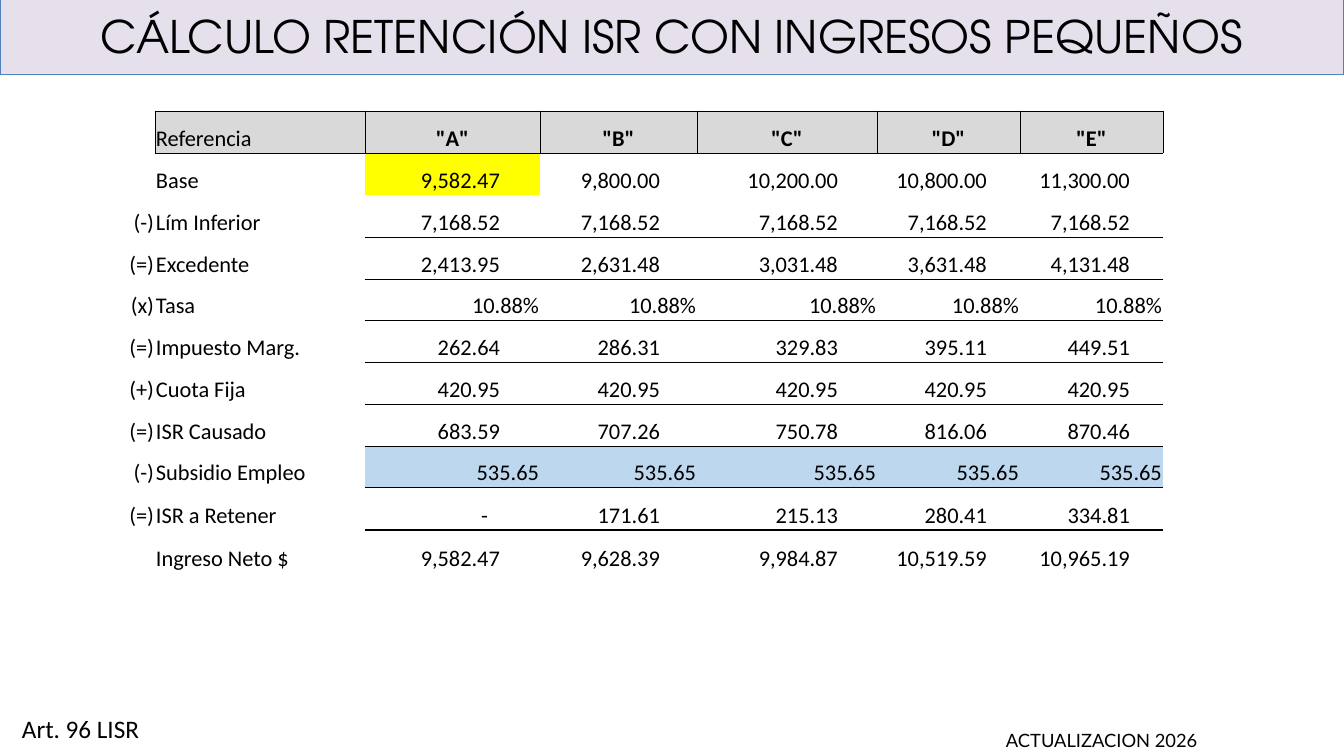
from lxml import etree
from pptx import Presentation
from pptx.dml.color import RGBColor
from pptx.enum.shapes import MSO_SHAPE
from pptx.enum.text import MSO_ANCHOR, PP_ALIGN
from pptx.oxml.ns import qn
from pptx.util import Pt

PX = 914400 / 100.8
RECTANGLE = MSO_SHAPE.RECTANGLE
TOP, MIDDLE, BOTTOM = MSO_ANCHOR.TOP, MSO_ANCHOR.MIDDLE, MSO_ANCHOR.BOTTOM
LEFT, CENTER, RIGHT = PP_ALIGN.LEFT, PP_ALIGN.CENTER, PP_ALIGN.RIGHT
BLACK = RGBColor(0x00, 0x00, 0x00)
LILAC = RGBColor(0xE6, 0xE0, 0xEC)
STEEL = RGBColor(0x4F, 0x81, 0xBD)
GRAY = RGBColor(0xD9, 0xD9, 0xD9)
YELLOW = RGBColor(0xFF, 0xFF, 0x00)
SKY = RGBColor(0xBD, 0xD7, 0xEE)
PLAIN_TABLE_STYLE = "{2D5ABB26-0587-4C30-8999-92F81FD0307C}"

COLUMN_WIDTHS = [143, 210, 175, 157, 180, 143, 143]
ROW_HEIGHTS = [42, 42, 42, 42, 41, 42, 42, 42, 41, 43, 43]
AMOUNT_MARGINS = [40, 37, 39, 33, 33]
DASH_MARGIN = 52
ROWS = [
    ["", "Referencia", '"A"', '"B"', '"C"', '"D"', '"E"'],
    ["", "Base", "9,582.47", "9,800.00", "10,200.00", "10,800.00", "11,300.00"],
    ["(-)", "Lím Inferior"] + ["7,168.52"] * 5,
    ["(=)", "Excedente", "2,413.95", "2,631.48", "3,031.48", "3,631.48", "4,131.48"],
    ["(x)", "Tasa"] + ["10.88%"] * 5,
    ["(=)", "Impuesto Marg.", "262.64", "286.31", "329.83", "395.11", "449.51"],
    ["(+)", "Cuota Fija"] + ["420.95"] * 5,
    ["(=)", "ISR Causado", "683.59", "707.26", "750.78", "816.06", "870.46"],
    ["(-)", "Subsidio Empleo"] + ["535.65"] * 5,
    ["(=)", "ISR a Retener", "-", "171.61", "215.13", "280.41", "334.81"],
    ["", "Ingreso Neto $", "9,582.47", "9,628.39", "9,984.87", "10,519.59", "10,965.19"],
]
TASA_ROW, SUBSIDIO_ROW = 4, 8
RULES_BELOW = {2: 0.5, 4: 0.5, 6: 0.5, 8: 0.5, 9: 2}


def px(length):
    return round(length * PX)


def write_paragraph(paragraph, text, font_format, alignment=LEFT):
    paragraph.text = text
    paragraph.alignment = alignment
    paragraph.font.color.rgb = BLACK
    for name, value in font_format.items():
        setattr(paragraph.font, name, value)


def set_margins(holder, left, top, right, bottom):
    margins = {"left": left, "top": top, "right": right, "bottom": bottom}
    for side, length in margins.items():
        setattr(holder, f"margin_{side}", px(length))


def add_title(slide, left, top, width, height):
    band = slide.shapes.add_shape(RECTANGLE, px(left), px(top), px(width), px(height))
    band.shadow.inherit = False
    band.fill.solid()
    band.fill.fore_color.rgb = LILAC
    band.line.color.rgb = STEEL
    band.line.width = Pt(0.75)
    frame = band.text_frame
    frame.word_wrap = True
    frame.vertical_anchor = MIDDLE
    set_margins(frame, 13, 6, 13, 6)
    write_paragraph(frame.paragraphs[0], "CÁLCULO RETENCIÓN ISR CON INGRESOS PEQUEÑOS",
                    {"size": Pt(32), "name": "TeX Gyre Adventor"}, CENTER)


def add_note(slide, left, top, width, height, text, font_format, margins):
    frame = slide.shapes.add_textbox(px(left), px(top), px(width), px(height)).text_frame
    frame.word_wrap = True
    frame.vertical_anchor = TOP
    set_margins(frame, *margins)
    write_paragraph(frame.paragraphs[0], text, font_format)


def set_borders(cell, widths):
    properties = cell._tc.get_or_add_tcPr()
    sides = [side for side in "LRTB" if side in widths]
    for position, side in enumerate(sides):
        line = etree.Element(qn(f"a:ln{side}"), w=str(Pt(widths[side])))
        fill = etree.SubElement(line, qn("a:solidFill"))
        etree.SubElement(fill, qn("a:srgbClr"), val=str(BLACK))
        properties.insert(position, line)


def cell_fill(row, column):
    if row == 0 and column > 0:
        return GRAY
    if row == 1 and column == 2:
        return YELLOW
    if row == SUBSIDIO_ROW and column > 1:
        return SKY
    return None


def cell_borders(row, column):
    if row == 0 and column > 0:
        return dict.fromkeys("LRTB", 0.5)
    if column > 1:
        edges = {"T": RULES_BELOW.get(row - 1), "B": RULES_BELOW.get(row)}
        return {side: width for side, width in edges.items() if width}
    return {}


def cell_alignment(row, column):
    if column == 1:
        return LEFT
    return CENTER if row == 0 else RIGHT


def right_margin(row, column, text):
    if column < 2 or row in (0, TASA_ROW, SUBSIDIO_ROW):
        return 1
    return DASH_MARGIN if text == "-" else AMOUNT_MARGINS[column - 2]


def fill_cell(cell, row, column, text):
    cell.vertical_anchor = BOTTOM
    set_margins(cell, 1, 1, right_margin(row, column, text), 0)
    font_format = {"size": Pt(16), "name": "Calibri", "bold": row == 0 and column > 1}
    write_paragraph(cell.text_frame.paragraphs[0], text, font_format, cell_alignment(row, column))
    color = cell_fill(row, column)
    if color is None:
        cell.fill.background()
    else:
        cell.fill.solid()
        cell.fill.fore_color.rgb = color
    set_borders(cell, cell_borders(row, column))


def add_withholding_table(slide, left, top):
    frame = slide.shapes.add_table(len(ROWS), len(COLUMN_WIDTHS), px(left), px(top),
                                   px(sum(COLUMN_WIDTHS)), px(sum(ROW_HEIGHTS)))
    table = frame.table
    table.first_row = table.horz_banding = False
    table._tbl.tblPr.find(qn("a:tableStyleId")).text = PLAIN_TABLE_STYLE
    for column, width in zip(table.columns, COLUMN_WIDTHS):
        column.width = px(width)
    for row, height in zip(table.rows, ROW_HEIGHTS):
        row.height = px(height)
    for row, texts in enumerate(ROWS):
        for column, text in enumerate(texts):
            fill_cell(table.cell(row, column), row, column, text)


def main():
    presentation = Presentation()
    presentation.slide_width = px(1344)
    presentation.slide_height = px(756)
    slide = presentation.slides.add_slide(presentation.slide_layouts[6])
    add_title(slide, 0, -3, 1344, 78)
    add_note(slide, 994, 723, 350, 33, "ACTUALIZACION 2026",
             {"size": Pt(13.1), "name": "Lato"}, (12, 6, 12, 6))
    add_note(slide, 12, 708, 150, 40, "Art. 96 LISR",
             {"size": Pt(18), "name": "Calibri"}, (10, 5, 10, 5))
    add_withholding_table(slide, 12, 111)
    presentation.save("out.pptx")


if __name__ == "__main__":
    main()
